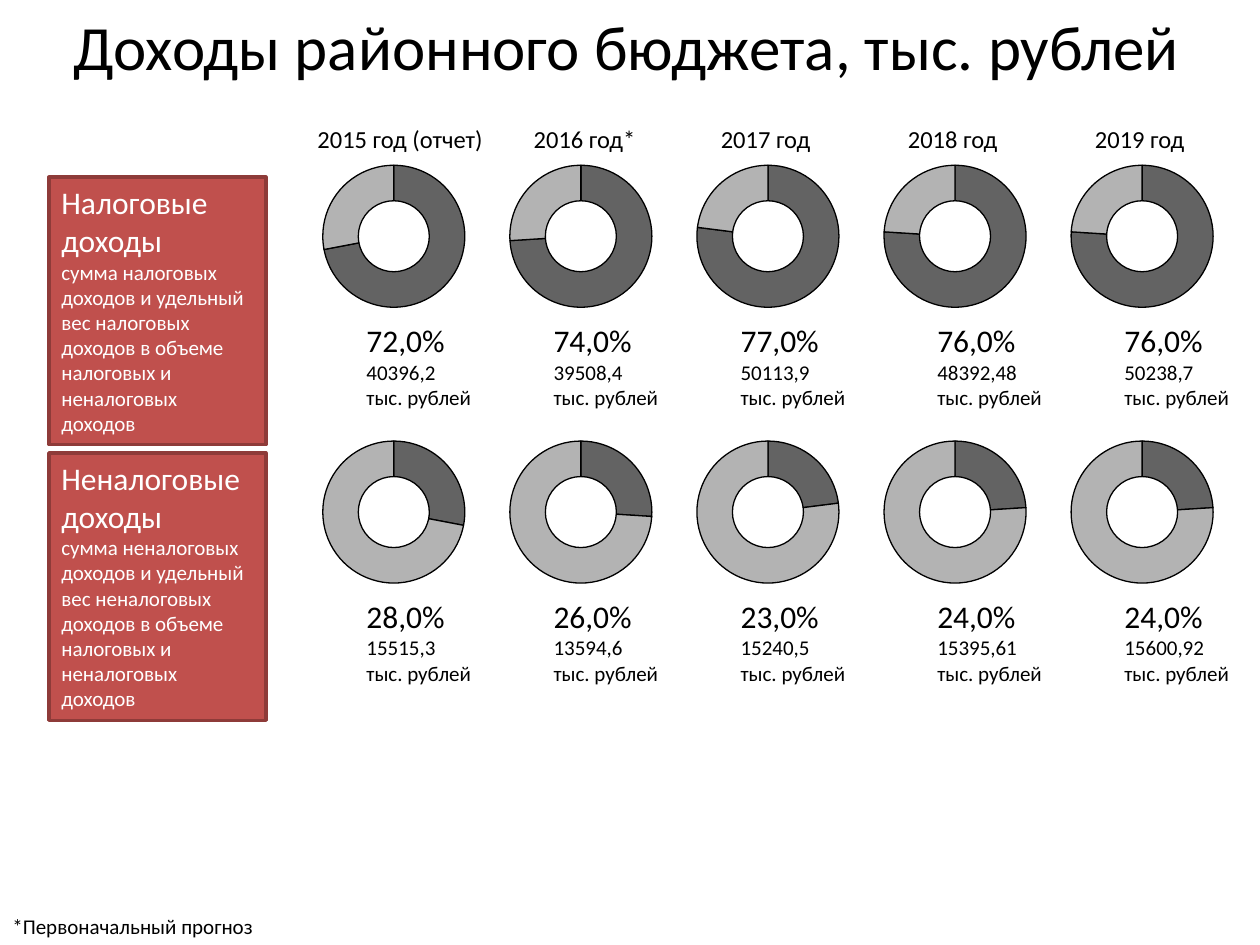
"""Build the district budget revenue slide with two rows of doughnut charts."""
from lxml import etree
from pptx import Presentation
from pptx.chart.data import CategoryChartData
from pptx.dml.color import RGBColor
from pptx.enum.chart import XL_CHART_TYPE
from pptx.enum.shapes import MSO_SHAPE
from pptx.enum.text import MSO_ANCHOR, MSO_AUTO_SIZE, PP_ALIGN
from pptx.oxml.ns import qn
from pptx.util import Pt

DOUGHNUT = XL_CHART_TYPE.DOUGHNUT
RECT = MSO_SHAPE.RECTANGLE
TOP, MIDDLE = MSO_ANCHOR.TOP, MSO_ANCHOR.MIDDLE
GROW = MSO_AUTO_SIZE.SHAPE_TO_FIT_TEXT
LEFT, CENTER = PP_ALIGN.LEFT, PP_ALIGN.CENTER

BLACK = RGBColor(0x00, 0x00, 0x00)
WHITE = RGBColor(0xFF, 0xFF, 0xFF)
RED = RGBColor(0xC0, 0x50, 0x4D)
DARK_RED = RGBColor(0x8E, 0x3B, 0x39)
DARK_GREY = RGBColor(0x63, 0x63, 0x63)
LIGHT_GREY = RGBColor(0xB3, 0xB3, 0xB3)

FONT = "Calibri"
COL_X, COL_STEP = 174.3, 106.9
ROW_Y, ROW_STEP = 84.3, 157.6
CHART_SIZE = 101.5
PLOT_LAYOUT = (("xMode", "edge"), ("yMode", "edge"),
               ("x", "0.1"), ("y", "0.1"), ("w", "0.8"), ("h", "0.8"))

YEARS = [("2015 год (отчет)", 0, 110), ("2016 год*", 16.7, 73.4),
         ("2017 год", 16.7, 66.2), ("2018 год", 16.7, 66.2),
         ("2019 год", 16.7, 66.2)]
AMOUNT_OFFSETS = [28, 28, 28, 33.5, 33.5]
ROWS = [
    ("Налоговые доходы",
     "сумма налоговых доходов и удельный вес налоговых доходов "
     "в объеме налоговых и неналоговых доходов",
     [(72, "40396,2"), (74, "39508,4"), (77, "50113,9"),
      (76, "48392,48"), (76, "50238,7")]),
    ("Неналоговые доходы",
     "сумма неналоговых доходов и удельный вес неналоговых доходов "
     "в объеме налоговых и неналоговых доходов",
     [(28, "15515,3"), (26, "13594,6"), (23, "15240,5"),
      (24, "15395,61"), (24, "15600,92")]),
]


class Deck:
    """Hold the style and the current slide."""

    def __init__(self, prs):
        self.s = prs.slides.add_slide(prs.slide_layouts[5])

    def add_lines(self, tf, lines, color=BLACK, align=LEFT):
        """Fill a text frame with one paragraph per (text, size) pair."""
        for i, (text, size) in enumerate(lines):
            p = tf.add_paragraph() if i else tf.paragraphs[0]
            p.alignment = align
            r = p.add_run()
            r.text = text
            r.font.name = FONT
            r.font.size = Pt(size)
            r.font.color.rgb = color

    def title(self, text, x, y, w, h):
        """Place the title placeholder."""
        sp = self.s.shapes.title
        sp.left, sp.top, sp.width, sp.height = Pt(x), Pt(y), Pt(w), Pt(h)
        tf = sp.text_frame
        tf.vertical_anchor = MIDDLE
        self.add_lines(tf, [(text, 36)], align=CENTER)

    def text(self, lines, x, y, w, h, wrap=False):
        """Add a text box that grows with its text."""
        tf = self.s.shapes.add_textbox(Pt(x), Pt(y), Pt(w), Pt(h)).text_frame
        tf.word_wrap = wrap
        tf.auto_size = GROW
        self.add_lines(tf, lines)

    def box(self, lines, x, y, w, h):
        """Add a red box with a row description."""
        sp = self.s.shapes.add_shape(RECT, Pt(x), Pt(y), Pt(w), Pt(h))
        sp.shadow.inherit = False
        sp.fill.solid()
        sp.fill.fore_color.rgb = RED
        sp.line.color.rgb = DARK_RED
        sp.line.width = Pt(2)
        tf = sp.text_frame
        tf.word_wrap = True
        tf.auto_size = GROW
        tf.vertical_anchor = TOP
        self.add_lines(tf, lines, WHITE)

    def doughnut(self, share, x, y):
        """Add a doughnut that shows a share of one hundred."""
        data = CategoryChartData()
        data.categories = ["1", "2"]
        data.add_series("Series 1", (share, 100 - share))
        chart = self.s.shapes.add_chart(
            DOUGHNUT, Pt(x), Pt(y), Pt(CHART_SIZE), Pt(CHART_SIZE), data).chart
        chart.has_legend = False
        chart.has_title = False
        chart.font.name = FONT
        chart.font.size = Pt(18)
        chart.font.color.rgb = BLACK
        plot = chart.plots[0]
        plot.vary_by_categories = True
        for i, color in enumerate((DARK_GREY, LIGHT_GREY)):
            fmt = plot.series[0].points[i].format
            fmt.fill.solid()
            fmt.fill.fore_color.rgb = color
            fmt.line.color.rgb = BLACK
            fmt.line.width = Pt(0.75)
        area = chart.element.find(".//" + qn("c:plotArea"))
        layout = area.find(qn("c:layout"))
        if layout is None:
            layout = etree.Element(qn("c:layout"))
            area.insert(0, layout)
        manual = etree.SubElement(layout, qn("c:manualLayout"))
        etree.SubElement(manual, qn("c:layoutTarget")).set("val", "inner")
        for tag, val in PLOT_LAYOUT:
            etree.SubElement(manual, qn("c:" + tag)).set("val", val)


def main():
    """Build and save the slide."""
    prs = Presentation()
    prs.slide_width, prs.slide_height = Pt(720), Pt(540)
    deck = Deck(prs)
    deck.title("Доходы районного бюджета, тыс. рублей", 34, 0, 648, 52)
    columns = [COL_X + i * COL_STEP for i in range(len(YEARS))]
    for row, (name, note, values) in enumerate(ROWS):
        y = ROW_Y + row * ROW_STEP
        deck.box([(name, 18), (note, 12)], 28, y + 17, 124, 152.8)
        for x, offset, (share, amount) in zip(columns, AMOUNT_OFFSETS, values):
            deck.doughnut(share, x, y)
            deck.text([(f"{share},0%", 18), (amount, 12), ("тыс. рублей", 12)],
                      x + offset, y + 95.8, 75.6, 58.2)
    for x, (year, offset, w) in zip(columns, YEARS):
        deck.text([(year, 14)], x + offset, 67.5, w, 24.2)
    deck.text([("*Первоначальный прогноз", 12)], 0, 518.2, 196.6, 21.8, wrap=True)
    prs.save("out.pptx")


if __name__ == "__main__":
    main()
